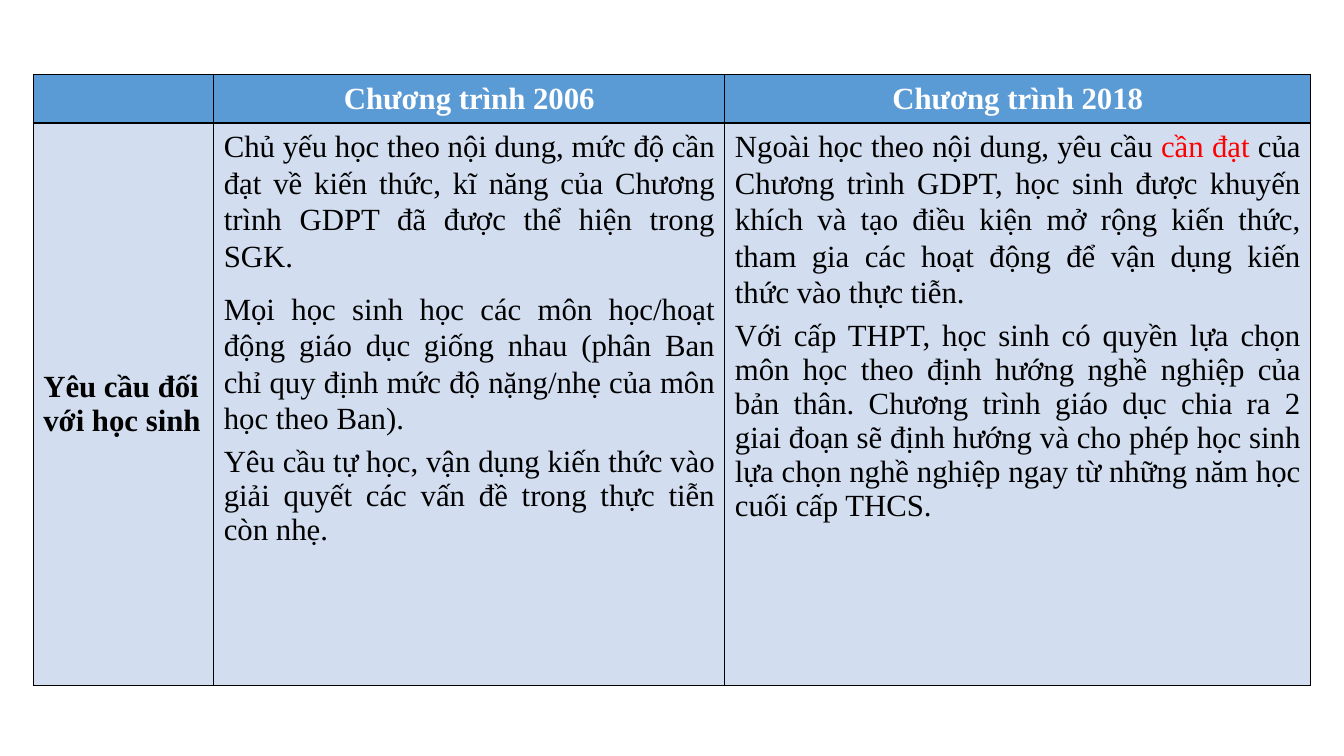
from lxml import etree
from pptx import Presentation
from pptx.dml.color import RGBColor
from pptx.enum import text
from pptx.oxml.ns import qn
from pptx.util import Inches, Pt

COLORS = {"header": "5B9BD5", "body": "D2DEEF", "border": "000000",
          "white": "FFFFFF", "black": "000000", "red": "FF0000"}
FONT = "Times New Roman"
SIZE = 22

HEADERS = ["", "Chương trình 2006", "Chương trình 2018"]
CRITERION = "Yêu cầu đối với học sinh"
# Each paragraph: (spaced, [(words, colour), ...])
PROGRAM_2006 = [
    (True, [("Chủ yếu học theo nội dung, mức độ cần đạt về kiến thức, kĩ năng của "
             "Chương trình GDPT đã được thể hiện trong SGK.", "black")]),
    (True, [("Mọi học sinh học các môn học/hoạt động giáo dục giống nhau (phân Ban "
             "chỉ quy định mức độ nặng/nhẹ của môn học theo Ban).", "black")]),
    (False, [("Yêu cầu tự học, vận dụng kiến thức vào giải quyết các vấn đề trong "
              "thực tiễn còn nhẹ.", "black")]),
]
PROGRAM_2018 = [
    (True, [("Ngoài học theo nội dung, yêu cầu ", "black"),
            ("cần đạt ", "red"),
            ("của Chương trình GDPT, học sinh được khuyến khích và tạo điều kiện mở "
             "rộng kiến thức, tham gia các hoạt động để vận dụng kiến thức vào thực "
             "tiễn.", "black")]),
    (False, [("Với cấp THPT, học sinh có quyền lựa chọn môn học theo định hướng nghề "
              "nghiệp của bản thân. Chương trình giáo dục chia ra 2 giai đoạn sẽ định "
              "hướng và cho phép học sinh lựa chọn nghề nghiệp ngay từ những năm học "
              "cuối cấp THCS.", "black")]),
]
COLUMN_WIDTHS = [1.79, 5.07, 5.81]
ROW_HEIGHTS = [0.48, 5.58]
LEFT, TOP = 0.33, 0.74


def write(paragraph, runs, bold=False, align=text.PP_ALIGN.LEFT, spaced=False):
    paragraph.alignment = align
    if spaced:
        paragraph.line_spacing = 1.07
        paragraph.space_before = paragraph.space_after = Pt(6)
    for words, color in runs:
        run = paragraph.add_run()
        run.text = words
        run.font.name, run.font.size, run.font.bold = FONT, Pt(SIZE), bold
        run.font.color.rgb = RGBColor.from_string(COLORS[color])


def style_cell(cell, fill):
    """Set the borders first: the schema puts them before the fill."""
    properties = cell._tc.get_or_add_tcPr()
    for side in ("lnL", "lnR", "lnT", "lnB"):
        line = etree.SubElement(properties, qn("a:" + side), w=str(Pt(1)))
        solid = etree.SubElement(line, qn("a:solidFill"))
        etree.SubElement(solid, qn("a:srgbClr"), val=COLORS["border"])
    cell.fill.solid()
    cell.fill.fore_color.rgb = RGBColor.from_string(COLORS[fill])


def main():
    deck = Presentation()
    deck.slide_width, deck.slide_height = Inches(13.33), Inches(7.5)
    slide = deck.slides.add_slide(deck.slide_layouts[6])
    comparison = slide.shapes.add_table(
        len(ROW_HEIGHTS), len(COLUMN_WIDTHS), Inches(LEFT), Inches(TOP),
        Inches(sum(COLUMN_WIDTHS)), Inches(sum(ROW_HEIGHTS))).table
    for column, width in zip(comparison.columns, COLUMN_WIDTHS):
        column.width = Inches(width)
    for row, height, fill in zip(comparison.rows, ROW_HEIGHTS, ("header", "body")):
        row.height = Inches(height)
        for cell in row.cells:
            style_cell(cell, fill)

    middle = text.MSO_ANCHOR.MIDDLE
    for i, header in enumerate(HEADERS):
        cell = comparison.cell(0, i)
        cell.vertical_anchor = middle
        if header:
            write(cell.text_frame.paragraphs[0], [(header, "white")],
                  bold=True, align=text.PP_ALIGN.CENTER)

    criterion = comparison.cell(1, 0)
    criterion.vertical_anchor = middle
    write(criterion.text_frame.paragraphs[0], [(CRITERION, "black")], bold=True)

    for i, program in enumerate((PROGRAM_2006, PROGRAM_2018), start=1):
        frame = comparison.cell(1, i).text_frame
        for n, (spaced, runs) in enumerate(program):
            paragraph = frame.add_paragraph() if n else frame.paragraphs[0]
            write(paragraph, runs, align=text.PP_ALIGN.JUSTIFY, spaced=spaced)

    deck.save("out.pptx")


if __name__ == "__main__":
    main()
